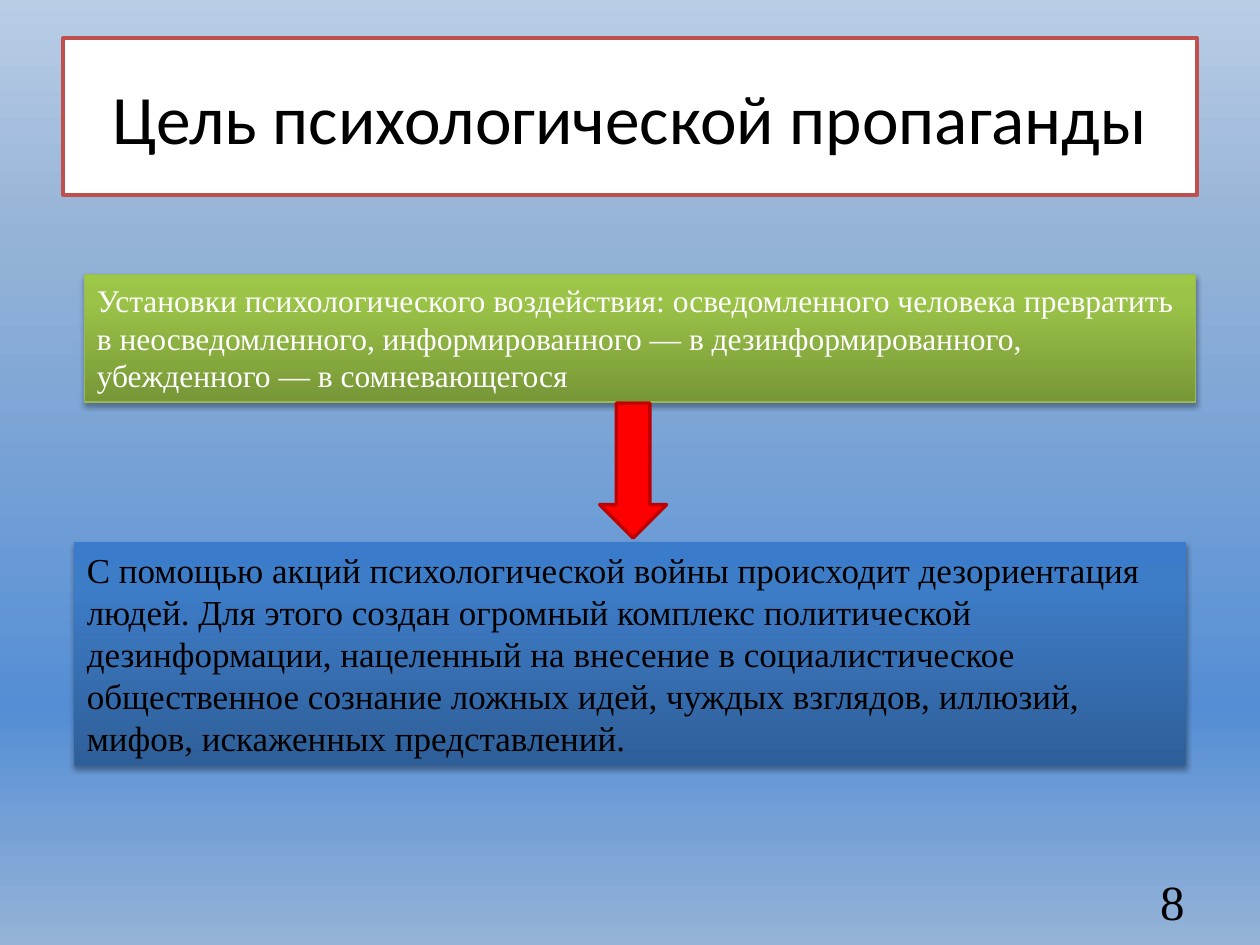
from dataclasses import dataclass

from lxml import etree
from pptx import Presentation
from pptx import util as u
from pptx.dml.color import RGBColor
from pptx.enum import shapes, text
from pptx.oxml import ns


@dataclass(frozen=True)
class Theme:
    heading_font: str = "Calibri"
    body_font: str = "Times New Roman"
    title_size: float = 39.6
    settings_size: float = 18
    result_size: float = 20
    number_size: float = 28
    white: str = "FFFFFF"
    black: str = "000000"
    title_line: str = "C0504D"
    settings_line: str = "98B955"
    arrow_fill: str = "FF0000"
    arrow_line: str = "C00000"
    sky: tuple = ((0, "B9CDE5"), (25, "95B3D7"), (75, "558ED5"), (100, "95B3D7"))
    green: tuple = ((0, "779737"), (80, "9BC348"), (100, "9DC746"))
    blue: tuple = ((0, "2F5F99"), (80, "3D7CC7"), (100, "3A7CCB"))


THEME = Theme()


def add_element(parent, tag, **attributes):
    values = {name: str(value) for name, value in attributes.items()}
    return etree.SubElement(parent, ns.qn(tag), values)


def paint_gradient(owner, fill, stops, angle):
    fill.gradient()
    gradient = owner.find(".//" + ns.qn("a:gradFill"))
    stop_list = gradient.find(ns.qn("a:gsLst"))
    for stop in list(stop_list):
        stop_list.remove(stop)
    for position, color in stops:
        stop = add_element(stop_list, "a:gs", pos=position * 1000)
        add_element(stop, "a:srgbClr", val=color)
    gradient.find(ns.qn("a:lin")).set("ang", str(angle * 60000))


def add_shadow(shape):
    effects = shape.element.spPr.find(ns.qn("a:effectLst"))
    shadow = add_element(effects, "a:outerShdw", blurRad=u.Pt(3.1), dist=u.Pt(1.8),
                         dir=90 * 60000, rotWithShape=0)
    color = add_element(shadow, "a:srgbClr", val=THEME.black)
    add_element(color, "a:alpha", val=35000)


def add_block(page, box, kind=shapes.MSO_SHAPE.RECTANGLE, fill=None, stops=None,
              line=None, line_width=2, shadow=False):
    block = page.shapes.add_shape(kind, *map(u.Inches, box))
    block.shadow.inherit = False
    if stops:
        paint_gradient(block.element, block.fill, stops, 270)
    else:
        block.fill.solid()
        block.fill.fore_color.rgb = RGBColor.from_string(fill)
    if line:
        block.line.color.rgb = RGBColor.from_string(line)
        block.line.width = u.Pt(line_width)
    else:
        block.line.fill.background()
    if shadow:
        add_shadow(block)
    return block


def write_text(shape, words, size, font=THEME.body_font, color=THEME.black,
               align=text.PP_ALIGN.LEFT, anchor=text.MSO_ANCHOR.MIDDLE):
    frame = shape.text_frame
    frame.word_wrap = True
    frame.vertical_anchor = anchor
    para = frame.paragraphs[0]
    para.alignment = align
    span = para.add_run()
    span.text = words
    span.font.name = font
    span.font.size = u.Pt(size)
    span.font.color.rgb = RGBColor.from_string(color)


def add_title(page, box):
    block = add_block(page, box, fill=THEME.white, line=THEME.title_line)
    write_text(block, "Цель психологической пропаганды", THEME.title_size,
               font=THEME.heading_font, align=text.PP_ALIGN.CENTER)


def add_settings(page, box):
    block = add_block(page, box, stops=THEME.green, line=THEME.settings_line,
                      line_width=0.75, shadow=True)
    write_text(block, "Установки психологического воздействия: осведомленного человека "
               "превратить в неосведомленного, информированного — в дезинформированного, "
               "убежденного — в сомневающегося", THEME.settings_size,
               color=THEME.white, anchor=text.MSO_ANCHOR.TOP)


def add_result(page, box):
    block = add_block(page, box, stops=THEME.blue, shadow=True)
    write_text(block, "С помощью акций психологической войны происходит дезориентация "
               "людей. Для этого создан огромный комплекс политической дезинформации, "
               "нацеленный на внесение в социалистическое общественное сознание ложных "
               "идей, чуждых взглядов, иллюзий, мифов, искаженных представлений.",
               THEME.result_size)


def add_down_arrow(page, box):
    add_block(page, box, kind=shapes.MSO_SHAPE.DOWN_ARROW,
              fill=THEME.arrow_fill, line=THEME.arrow_line)


def add_page_number(page, box):
    number = page.shapes.add_textbox(*map(u.Inches, box))
    write_text(number, "8", THEME.number_size, align=text.PP_ALIGN.RIGHT)


def main():
    deck = Presentation()
    deck.slide_width, deck.slide_height = u.Inches(10), u.Inches(7.5)
    page = deck.slides.add_slide(deck.slide_layouts[6])
    paint_gradient(page.element, page.background.fill, THEME.sky, 90)
    add_title(page, (0.5, 0.3, 9, 1.25))
    add_settings(page, (0.67, 2.18, 8.82, 1.01))
    add_result(page, (0.59, 4.3, 8.82, 1.78))
    add_down_arrow(page, (4.76, 3.2, 0.53, 1.07))
    add_page_number(page, (7.17, 6.95, 2.33, 0.4))
    deck.save("out.pptx")


if __name__ == "__main__":
    main()
